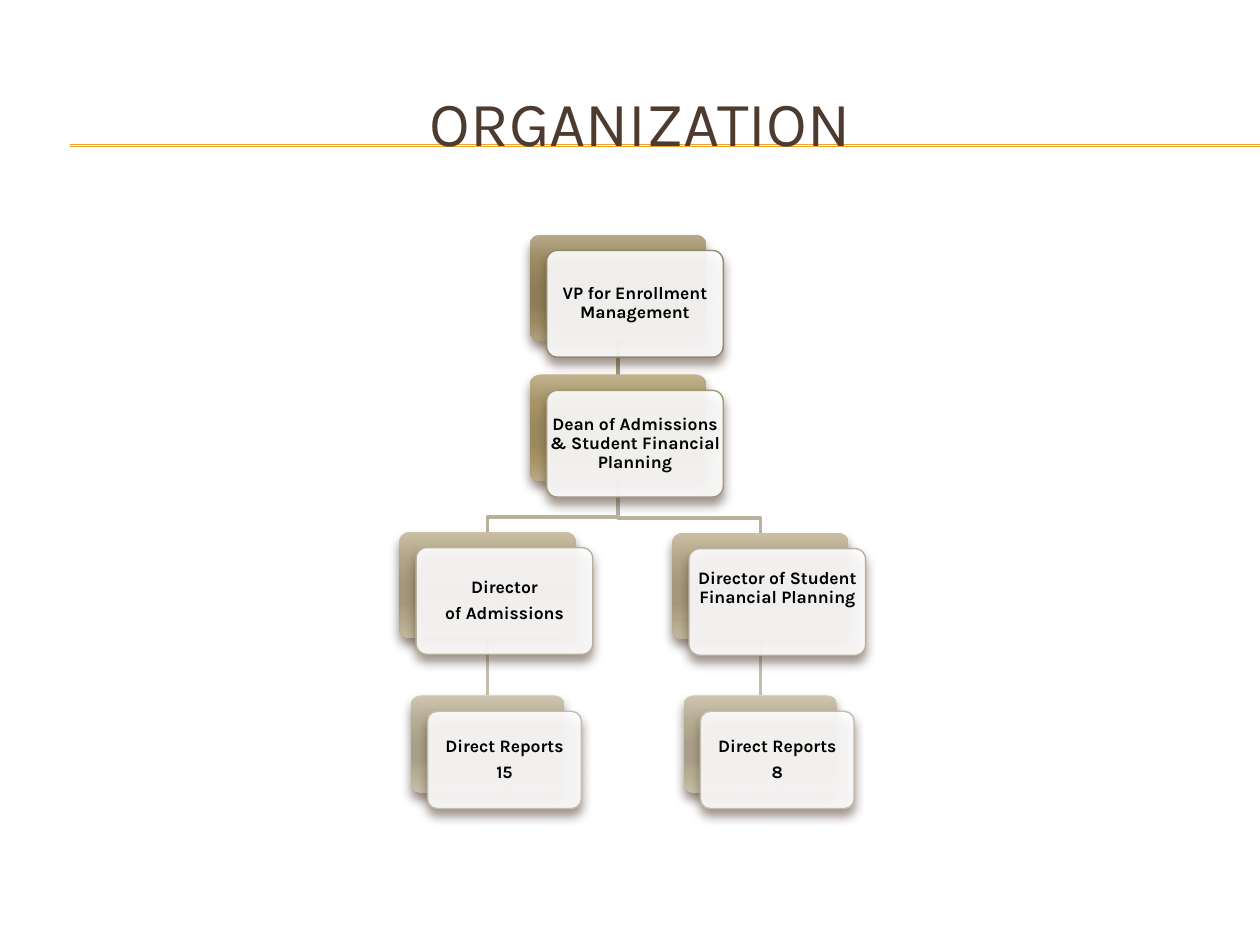
from dataclasses import dataclass

from lxml import etree
from pptx import Presentation
from pptx.dml.color import RGBColor
from pptx.enum.shapes import MSO_CONNECTOR, MSO_SHAPE
from pptx.enum.text import MSO_ANCHOR, PP_ALIGN
from pptx.oxml.ns import qn
from pptx.util import Cm, Pt

ROUND = MSO_SHAPE.ROUNDED_RECTANGLE
LINE = MSO_CONNECTOR.STRAIGHT
MID = MSO_ANCHOR.MIDDLE
MIDDLE = PP_ALIGN.CENTER
FONT = "Karla"
BROWN = "4E3B30"
GOLD = "F0A22E"
STOPS = (0, 25, 50, 65, 80, 100)
SHIFT_X, SHIFT_Y = 0.34, 0.32
DROP = 0.3


@dataclass
class Tone:
    edge: str
    shades: tuple[str, ...]


@dataclass
class Node:
    x: float
    y: float
    wide: float
    high: float
    tone: Tone
    lines: tuple[str, ...]
    foot: float = 0

    @property
    def mid(self) -> float:
        return self.x + self.wide / 2


def color(code: str) -> RGBColor:
    return RGBColor.from_string(code)


def child(host, tag: str, **attrs):
    return etree.SubElement(host, qn(tag), {k: str(v) for k, v in attrs.items()})


def write(frame, lines: tuple[str, ...], size: float, code: str, bold: bool) -> None:
    frame.word_wrap = True
    frame.vertical_anchor = MID
    for i, line in enumerate(lines):
        para = frame.paragraphs[0] if i == 0 else frame.add_paragraph()
        para.alignment = MIDDLE
        if bold:
            para.line_spacing = 0.9
            para.space_after = Pt(4)
        run = para.add_run()
        run.text = line
        run.font.name = FONT
        run.font.size = Pt(size)
        run.font.bold = bold
        run.font.color.rgb = color(code)


def rule(slide, x1: float, y1: float, x2: float, y2: float, code: str, width: float) -> None:
    line = slide.shapes.add_connector(LINE, Cm(x1), Cm(y1), Cm(x2), Cm(y2))
    line.line.color.rgb = color(code)
    line.line.width = Pt(width)
    child(line._element.spPr, "a:effectLst")


def link(slide, top: Node, low: Node) -> None:
    start, end = top.y + top.high, low.y
    if abs(top.mid - low.mid) < 0.01:
        rule(slide, top.mid, start, low.mid, end, low.tone.edge, 2)
        return
    bend = end - DROP
    path = slide.shapes.build_freeform(Cm(top.mid), Cm(start))
    spots = ((top.mid, bend), (low.mid, bend), (low.mid, end))
    path.add_line_segments([(Cm(x), Cm(y)) for x, y in spots], close=False)
    shape = path.convert_to_shape()
    shape.shadow.inherit = False
    shape.fill.background()
    shape.line.color.rgb = color(low.tone.edge)
    shape.line.width = Pt(2)


def card(slide, x: float, y: float, node: Node):
    shape = slide.shapes.add_shape(ROUND, Cm(x), Cm(y), Cm(node.wide), Cm(node.high))
    shape.adjustments[0] = 0.1
    shape.shadow.inherit = False
    glow = child(shape._element.spPr.find(qn("a:effectLst")), "a:outerShdw",
                 blurRad=Pt(6), dist=Pt(4), dir=5400000, rotWithShape=0)
    child(child(glow, "a:srgbClr", val=BROWN), "a:alpha", val=60000)
    return shape


def draw(slide, node: Node) -> None:
    back = card(slide, node.x, node.y, node)
    back.line.fill.background()
    back.fill.gradient()
    back.fill.gradient_angle = 270
    stops = back._element.spPr.find(qn("a:gradFill")).find(qn("a:gsLst"))
    for stop in list(stops):
        stops.remove(stop)
    for place, shade in zip(STOPS, node.tone.shades):
        child(child(stops, "a:gs", pos=place * 1000), "a:srgbClr", val=shade)

    front = card(slide, node.x + SHIFT_X, node.y + SHIFT_Y, node)
    front.fill.solid()
    front.fill.fore_color.rgb = color("FFFFFF")
    solid = front._element.spPr.find(qn("a:solidFill"))
    child(solid[0], "a:alpha", val=90000)
    front.line.color.rgb = color(node.tone.edge)
    front.line.width = Pt(0.79)
    frame = front.text_frame
    frame.margin_left = frame.margin_right = frame.margin_top = 0
    frame.margin_bottom = Cm(node.foot)
    write(frame, node.lines, 10, "000000", True)


def main() -> None:
    deck = Presentation()
    deck.slide_width, deck.slide_height = Cm(25.4), Cm(19.05)
    slide = deck.slides.add_slide(deck.slide_layouts[6])

    for y in (2.92, 2.95):
        rule(slide, 1.42, y, 25.4, y, GOLD, 0.75)
    title = slide.shapes.add_textbox(Cm(0.84), Cm(1.27), Cm(24.13), Cm(2.34))
    write(title.text_frame, ("ORGANIZATION",), 36, BROWN, False)

    first = Tone("928769", ("B6A98A", "9A8A61", "8E7F59", "8E7F59", "998960", "AFA282"))
    second = Tone("A29777", ("C1B28D", "A79567", "9B8A5E", "9B8A5E", "A69466", "BAAB86"))
    third = Tone("B9B19E", ("CABFA5", "B1A587", "A4987C", "A4987C", "B0A486", "C4B99E"))
    fourth = Tone("C4BDAE", ("CFC5B0", "B7AD94", "A99F88", "A99F88", "B6AC93", "C8BFAA"))

    big, small = (3.56, 2.15), (3.1, 1.96)
    chief = Node(10.68, 4.73, *big, first, ("VP for Enrollment Management",))
    dean = Node(10.68, 7.55, *big, second,
                ("Dean of Admissions & Student Financial Planning",))
    entry = Node(8.05, 10.72, *big, third, ("Director", "of Admissions"))
    entry_team = Node(8.28, 14.02, *small, fourth, ("Direct Reports", "15"))
    money = Node(13.55, 10.74, *big, third,
                 ("Director of Student Financial Planning",), 0.56)
    money_team = Node(13.78, 14.02, *small, fourth, ("Direct Reports", "8"))

    pairs = ((money, money_team), (dean, money), (entry, entry_team),
             (dean, entry), (chief, dean))
    for top, low in pairs:
        link(slide, top, low)
    for node in (chief, dean, entry, entry_team, money, money_team):
        draw(slide, node)

    deck.save("out.pptx")


if __name__ == "__main__":
    main()
